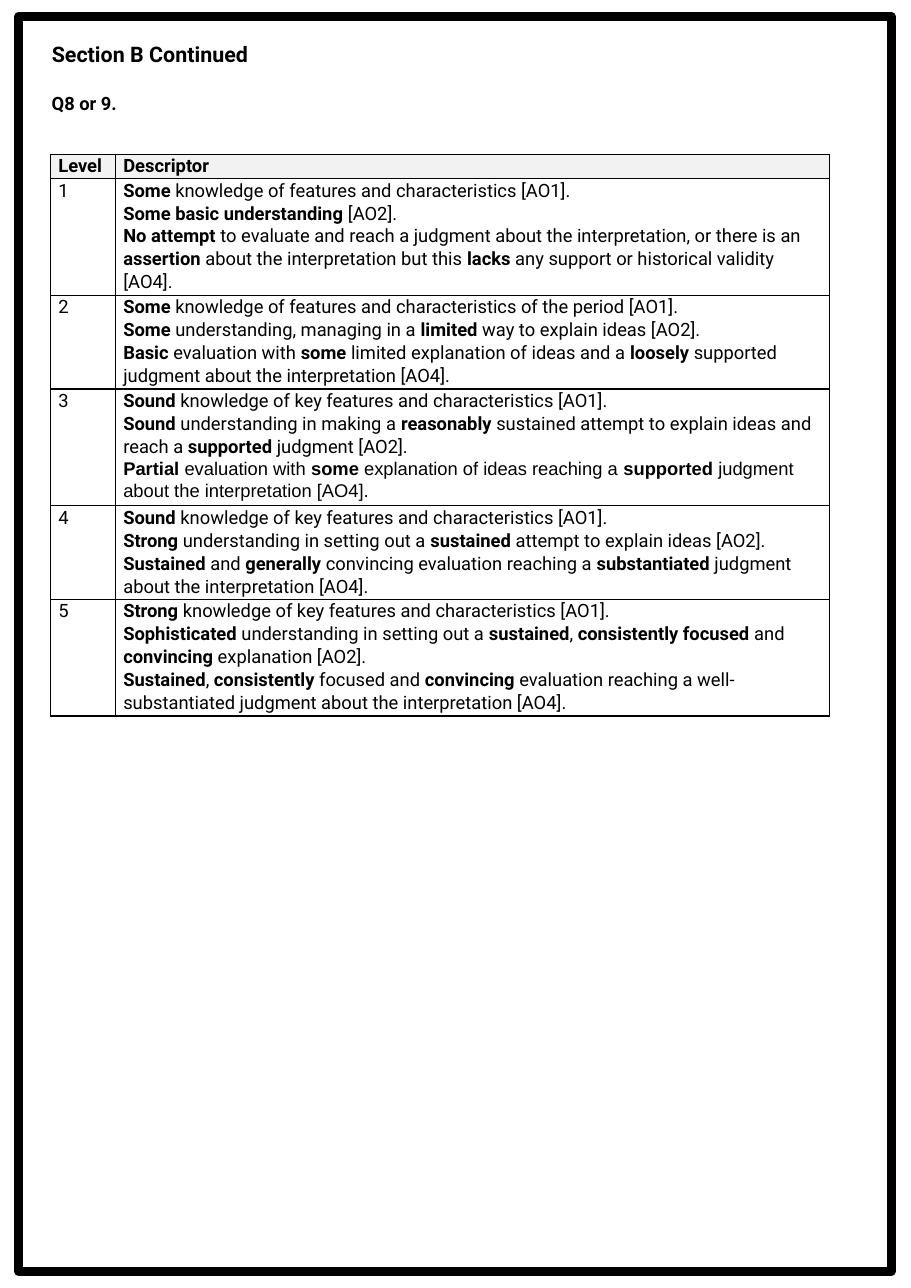
from lxml import etree
from pptx import Presentation
from pptx.dml.color import RGBColor
from pptx.enum.shapes import MSO_SHAPE
from pptx.enum.text import MSO_ANCHOR, MSO_AUTO_SIZE, PP_ALIGN
from pptx.oxml.ns import qn
from pptx.util import Inches, Pt

RECT = MSO_SHAPE.RECTANGLE
TOP = MSO_ANCHOR.TOP
LEFT = PP_ALIGN.LEFT
NO_FIT = MSO_AUTO_SIZE.NONE

TITLE = "Section B Continued"
QUESTION = "Q8 or 9."
HEADER = ("Level", "Descriptor")
# Asterisks switch bold on and off; the number is the lines the level takes.
LEVELS = [
    (5, ["*Some* knowledge of features and characteristics [AO1].",
         "*Some basic understanding *[AO2].",
         "*No attempt *to evaluate and reach a judgment about the interpretation, or there is an "
         "*assertion* about the interpretation but this *lacks* any support or historical "
         "validity [AO4]."]),
    (4, ["*Some* knowledge of features and characteristics of the period [AO1].",
         "*Some* understanding, managing in a *limited* way to explain ideas [AO2].",
         "*Basic* evaluation with *some* limited explanation of ideas and a *loosely* supported "
         "judgment about the interpretation [AO4]."]),
    (5, ["*Sound* knowledge of key features and characteristics [AO1].",
         "*Sound* understanding in making a *reasonably* sustained attempt to explain ideas and "
         "reach a *supported* judgment [AO2].",
         "*Partial *evaluation with *some* explanation of ideas reaching a *supported* judgment "
         "about the interpretation [AO4]."]),
    (4, ["*Sound* knowledge of key features and characteristics [AO1].",
         "*Strong* understanding in setting out a *sustained* attempt to explain ideas [AO2].",
         "*Sustained* and *generally* convincing evaluation reaching a *substantiated* judgment "
         "about the interpretation [AO4]."]),
    (5, ["*Strong* knowledge of key features and characteristics [AO1].",
         "*Sophisticated* understanding in setting out a *sustained*, *consistently focused* and "
         "*convincing* explanation [AO2].",
         "*Sustained*, *consistently* focused and *convincing* evaluation reaching a "
         "well-substantiated judgment about the interpretation [AO4]."]),
]
ARIAL_START = "*Partial"
COLUMNS = (0.59, 6.48)
LINE_HEIGHT = 0.21
BLACK, WHITE, GREY = "000000", "FFFFFF", "F2F2F2"


def color(value):
    return RGBColor.from_string(value)


def style(p, size, name="Roboto", bold=None):
    p.alignment = LEFT
    p.font.size, p.font.name, p.font.bold = Pt(size), name, bold
    p.font.color.rgb = color(BLACK)


def write_heading(sp, text, size, top):
    sp.left, sp.top, sp.width, sp.height = [Inches(v) for v in (0.37, top, 7.52, 0.43)]
    tf = sp.text_frame
    tf.word_wrap, tf.auto_size, tf.vertical_anchor = True, NO_FIT, TOP
    tf.margin_left = tf.margin_right = tf.margin_top = tf.margin_bottom = Inches(0.1)
    tf.text = text
    p = tf.paragraphs[0]
    p.line_spacing, p.space_before = 1.0, Pt(0)
    style(p, size, bold=True)


def add_borders(cell):
    tc_pr = cell._tc.get_or_add_tcPr()
    for i, side in enumerate(("lnL", "lnR", "lnT", "lnB")):
        ln = etree.Element(qn("a:" + side), w=str(Pt(1)))
        fill = etree.SubElement(ln, qn("a:solidFill"))
        etree.SubElement(fill, qn("a:srgbClr"), val=BLACK)
        tc_pr.insert(i, ln)


def fill_cell(cell, lines, background):
    cell.fill.solid()
    cell.fill.fore_color.rgb = color(background)
    cell.margin_left = cell.margin_right = Inches(0.07)
    cell.margin_top = cell.margin_bottom = 0
    add_borders(cell)
    tf = cell.text_frame
    for i, line in enumerate(lines):
        p = tf.add_paragraph() if i else tf.paragraphs[0]
        p.line_spacing = 1.07
        style(p, 12, "Arial" if line.startswith(ARIAL_START) else "Roboto")
        for j, part in enumerate(line.split("*")):
            if part:
                r = p.add_run()
                r.text, r.font.bold = part, j % 2 == 1


prs = Presentation()
prs.slide_width, prs.slide_height = Inches(8.27), Inches(11.69)
s = prs.slides.add_slide(prs.slide_layouts[5])
title = s.shapes.title

frame = s.shapes.add_shape(RECT, Inches(0.17), Inches(0.15), Inches(7.92), Inches(11.39))
frame.shadow.inherit = False
frame.fill.solid()
frame.fill.fore_color.rgb = color(WHITE)
frame.line.color.rgb = color(BLACK)
frame.line.width = Pt(6)
title.element.addprevious(frame.element)

write_heading(title, TITLE, 14, 0.27)
write_heading(s.shapes.add_textbox(0, 0, 0, 0), QUESTION, 12, 0.74)

rows = [(1, [[f"*{label}*"] for label in HEADER], GREY)]
rows += [(n, [[str(level)], lines], WHITE) for level, (n, lines) in enumerate(LEVELS, 1)]
heights = [n * LINE_HEIGHT + 0.01 for n, _, _ in rows]
table = s.shapes.add_table(len(rows), len(COLUMNS), Inches(0.46), Inches(1.4),
                           Inches(sum(COLUMNS)), Inches(sum(heights))).table
table.first_row = table.horz_banding = False
for column, width in zip(table.columns, COLUMNS):
    column.width = Inches(width)
for row, height, (_, cells, background) in zip(table.rows, heights, rows):
    row.height = Inches(height)
    for cell, lines in zip(row.cells, cells):
        fill_cell(cell, lines, background)

prs.save("out.pptx")
